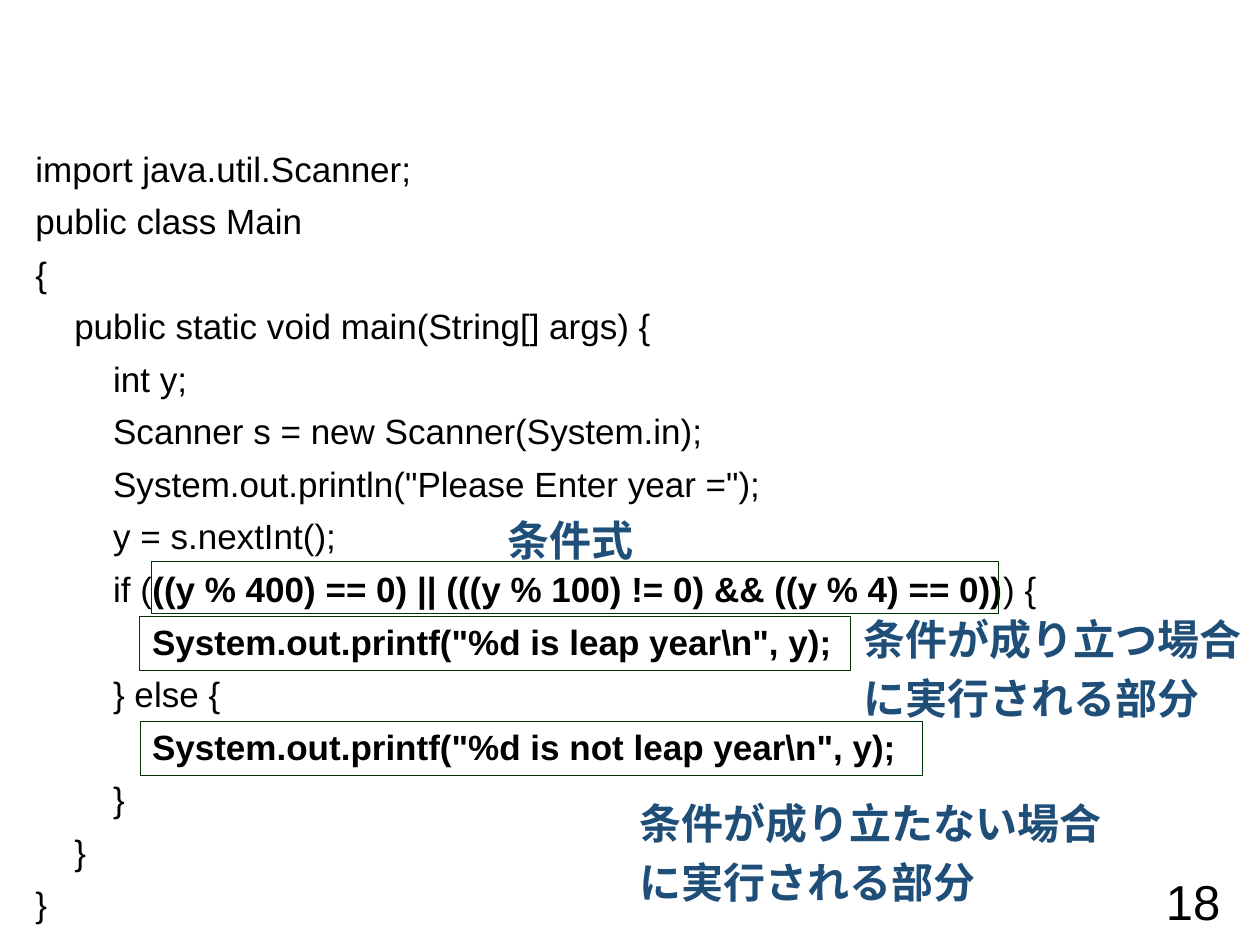
from collections import namedtuple

from pptx import Presentation
from pptx import util as u
from pptx.dml.color import RGBColor
from pptx.enum import shapes, text
from pptx.oxml.ns import qn

BLACK = RGBColor(0x00, 0x00, 0x00)
NAVY = RGBColor(0x1F, 0x4E, 0x79)
DARK_GREEN = RGBColor(0x00, 0x33, 0x00)

CODE_FONT = {"name": "Arial", "size": u.Pt(20)}
LABEL_FONT = {"name": "Arial", "size": u.Pt(24), "bold": True}
NUMBER_FONT = {"name": "Arial", "size": u.Pt(28)}

Box = namedtuple("Box", "left top width height")  # centimetres

BOLD_MARK = "**"  # switches bold on and off within a code line
CODE = r"""import java.util.Scanner;
public class Main
{
    public static void main(String[] args) {
        int y;
        Scanner s = new Scanner(System.in);
        System.out.println("Please Enter year =");
        y = s.nextInt();
        if (**((y % 400) == 0) || (((y % 100) != 0) && ((y % 4) == 0))**) {
**            System.out.printf("%d is leap year\n", y);**
        } else {
**            System.out.printf("%d is not leap year\n", y);**
        }
    }
}"""

# Frames around the condition and the two branches, relative to the code box
FRAMES = [
    Box(2.59, 8.48, 17.07, 1.04),
    Box(2.36, 9.58, 14.33, 1.09),
    Box(2.38, 11.7, 15.75, 1.09),
]

LABELS = [
    (Box(9.98, 10.24, 4.3, 1.3), ["条件式"]),
    (Box(17.15, 12.24, 8.2, 2.6), ["条件が成り立つ場合", "に実行される部分"]),
    (Box(12.65, 15.95, 9.9, 2.6), ["条件が成り立たない場合", "に実行される部分"]),
]


def lengths(box):
    return [u.Cm(value) for value in box]


def set_font(span, formats, colour):
    for name, value in formats.items():
        setattr(span.font, name, value)
    span.font.color.rgb = colour


def paragraph_at(frame, index):
    return frame.paragraphs[0] if index == 0 else frame.add_paragraph()


def add_code(page, box):
    """Fill the body placeholder with the listing, without bullets."""
    body = page.placeholders[1]
    body.left, body.top, body.width, body.height = lengths(box)
    frame = body.text_frame
    frame.auto_size = text.MSO_AUTO_SIZE.NONE
    frame.vertical_anchor = text.MSO_ANCHOR.TOP
    for index, line in enumerate(CODE.split("\n")):
        para = paragraph_at(frame, index)
        para.space_before = u.Pt(6 if index else 0)
        properties = para._p.get_or_add_pPr()
        properties.set("marL", "0")
        properties.set("indent", "0")
        properties.append(properties.makeelement(qn("a:buNone"), {}))
        for part, words in enumerate(line.split(BOLD_MARK)):
            if words:
                span = para.add_run()
                span.text = words
                set_font(span, {**CODE_FONT, "bold": part % 2 == 1}, BLACK)


def add_frames(page, box):
    for inner in FRAMES:
        placed = inner._replace(left=box.left + inner.left, top=box.top + inner.top)
        frame = page.shapes.add_shape(shapes.MSO_SHAPE.RECTANGLE, *lengths(placed))
        frame.shadow.inherit = False
        frame.fill.background()
        frame.line.color.rgb = DARK_GREEN
        frame.line.width = u.Pt(0.5)


def add_text(page, box, lines, formats, colour, wrap=False,
             align=text.PP_ALIGN.LEFT, anchor=text.MSO_ANCHOR.TOP):
    frame = page.shapes.add_textbox(*lengths(box)).text_frame
    frame.word_wrap = wrap
    frame.vertical_anchor = anchor
    for index, line in enumerate(lines):
        para = paragraph_at(frame, index)
        para.alignment = align
        para.space_before = u.Pt(5 if index else 0)
        span = para.add_run()
        span.text = line
        set_font(span, formats, colour)


def add_page_number(page, box):
    add_text(page, box, ["18"], NUMBER_FONT, BLACK, wrap=True,
             align=text.PP_ALIGN.RIGHT, anchor=text.MSO_ANCHOR.MIDDLE)


def main():
    deck = Presentation()
    deck.slide_width, deck.slide_height = u.Cm(25.4), u.Cm(19.05)
    page = deck.slides.add_slide(deck.slide_layouts[1])
    title = page.shapes.title
    title.element.getparent().remove(title.element)

    code_box = Box(0.46, 2.84, 24.9, 16)
    add_code(page, code_box)
    add_page_number(page, Box(19.13, 17.65, 5.72, 1.02))
    add_frames(page, code_box)
    for box, lines in LABELS:
        add_text(page, box, lines, LABEL_FONT, NAVY)
    deck.save("out.pptx")


if __name__ == "__main__":
    main()
